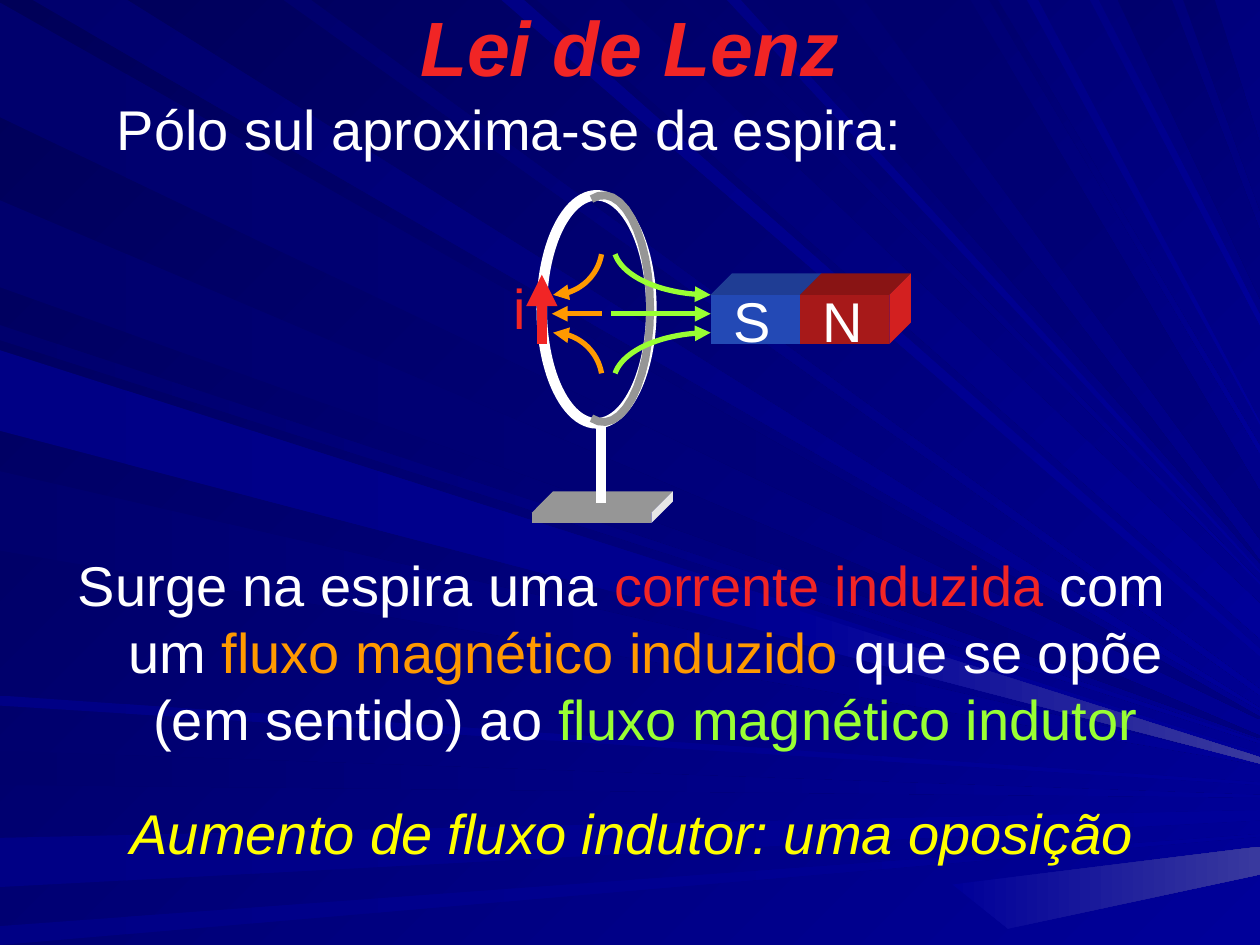
from math import cos, radians, sin
from typing import NamedTuple

from lxml import etree
from pptx import Presentation
from pptx import util as u
from pptx.dml.color import RGBColor
from pptx.enum import shapes, text
from pptx.oxml.ns import qn

Point = tuple[float, float]
FONT = "Arial"
WIDTH, HEIGHT = 10, 7.5
COLORS = {
    "white": "FFFFFF", "red": "F12525", "orange": "FF9900", "green": "99FF33",
    "yellow": "FFFF00", "gray": "969696", "light": "E6E6E6",
    "south": "2349B5", "south top": "1F3D94",
    "north": "A71919", "north top": "891414", "north side": "D32020",
    "night": "000058", "dark": "00006D", "deep": "000080", "navy": "000085",
    "royal": "000099", "glow": "39399E",
}


class Ray(NamedTuple):
    """A beam from one slide edge to the right edge."""
    near: float
    far: float
    end: float
    spread: float = 0.02
    start_color: str = "dark"
    end_color: str = "royal"


class Block(NamedTuple):
    left: float
    top: float
    width: float
    height: float
    front: str
    lid: str
    side: str


class TextBlock(NamedTuple):
    place: tuple[float, float, float, float]
    runs: list[tuple[str, str]]
    centered: bool = False
    italic: bool = False


LEFT_RAYS = [
    Ray(0.02, 0.93, 5.69, end_color="deep"),
    Ray(5.96, 6.23, 6.31),
    Ray(6.65, 7.04, 6.43, 0.08, "navy"),
    Ray(7.35, 7.5, 6.62, start_color="navy"),
    Ray(2.58, 2.7, 5.88),
    Ray(1.59, 2.28, 5.84, end_color="deep"),
    Ray(2.78, 3.42, 5.98, 0.06, "navy"),
    Ray(3.74, 4.37, 6.05),
    Ray(5.52, 5.6, 6.21, start_color="navy"),
]
TOP_RAYS = [
    Ray(0.26, 1.01, 5.62),
    Ray(3.98, 4.16, 5.15, 0.06, "navy"),
    Ray(4.26, 4.92, 4.79, 0.28),
    Ray(5.4, 5.52, 4.62),
    Ray(6.06, 6.61, 4.45, end_color="deep"),
    Ray(8.87, 9.3, 1.83, 0.54, end_color="deep"),
    Ray(9.39, 9.64, 1.14, 0.53, end_color="deep"),
    Ray(2.25, 2.47, 5.47, 0.05),
    Ray(5.77, 5.88, 4.53, start_color="navy"),
    Ray(6.86, 7.7, 3.9, 0.38, end_color="deep"),
    Ray(7.85, 7.92, 3.54, 0.06),
    Ray(8.15, 8.24, 3.35, start_color="navy"),
    Ray(8.65, 8.72, 2.5, 0.08, "navy"),
]
GLOWS = [
    [(6.35, 4.85), (WIDTH, 6.01), (WIDTH, 6.06), (6.35, 5.11)],
    [(7.56, 7.02), (WIDTH, 6.72), (WIDTH, 6.94), (8, 7.37)],
]
DEPTH = 0.17
BASE = Block(4.22, 4.07, 0.95, 0.08, "gray", "gray", "light")
MAGNET = [
    Block(5.64, 2.34, 0.71, 0.39, "south", "south top", "south top"),
    Block(6.35, 2.34, 0.71, 0.39, "north", "north top", "north side"),
]
TEXTS = [
    TextBlock((3.98, 2.12, 0.48, 0.75), [("i", "red")]),
    TextBlock((0.83, 0.7, 6.93, 0.71), [("Pólo sul aproxima-se da espira:", "white")]),
    TextBlock((0.35, 4.32, 9.17, 1.67), [
        ("Surge na espira uma ", "white"), ("corrente induzida", "red"), (" com um ", "white"),
        ("fluxo magnético induzido", "orange"), (" que se opõe (em sentido) ao ", "white"),
        ("fluxo magnético indutor", "green")], centered=True),
    TextBlock((5.72, 2.23, 0.48, 0.75), [("S", "white")]),
    TextBlock((6.43, 2.23, 0.48, 0.75), [("N", "white")]),
    TextBlock((0.55, 6.29, 8.94, 0.84), [("Aumento de fluxo indutor: uma oposição", "yellow")],
              centered=True, italic=True),
]


def rgb(name: str) -> RGBColor:
    return RGBColor.from_string(COLORS[name])


def paint(fill, start: str, end: str, angle: int) -> None:
    fill.gradient()
    fill.gradient_angle = (360 - angle) % 360
    for stop, name in zip(fill.gradient_stops, (start, end)):
        stop.color.rgb = rgb(name)


def set_line(shape, color: str, width: float, arrow: bool = False) -> None:
    shape.line.color.rgb = rgb(color)
    shape.line.width = u.Pt(width)
    if arrow:
        etree.SubElement(shape.line._get_or_add_ln(), qn("a:headEnd"), type="triangle")


def add_outline(slide, points: list[Point], close: bool = True):
    corners = [(u.Inches(x), u.Inches(y)) for x, y in points]
    builder = slide.shapes.build_freeform(*corners[0])
    builder.add_line_segments(corners[1:], close=close)
    shape = builder.convert_to_shape()
    shape.shadow.inherit = False
    return shape


def add_beam(slide, points: list[Point], start: str, end: str, angle: int = 0) -> None:
    shape = add_outline(slide, points)
    paint(shape.fill, start, end, angle)
    shape.line.fill.background()


def add_block(slide, block: Block) -> None:
    """Draw a box seen from the front, with its lid and right side."""
    left, top = block.left, block.top
    right, bottom = left + block.width, top + block.height
    faces = {
        "lid": [(left, top), (left + DEPTH, top - DEPTH), (right + DEPTH, top - DEPTH), (right, top)],
        "side": [(right, top), (right + DEPTH, top - DEPTH), (right + DEPTH, bottom - DEPTH), (right, bottom)],
        "front": [(left, top), (right, top), (right, bottom), (left, bottom)],
    }
    for face, points in faces.items():
        shape = add_outline(slide, points)
        shape.fill.solid()
        shape.fill.fore_color.rgb = rgb(getattr(block, face))
        shape.line.fill.background()


def add_arc(slide, center: Point, radii: Point, start: float, sweep: float,
            color: str, width: float, arrow: bool = False) -> None:
    steps = 24
    angles = [radians(start + sweep * step / steps) for step in range(steps + 1)]
    points = [(center[0] + radii[0] * cos(a), center[1] + radii[1] * sin(a)) for a in angles]
    shape = add_outline(slide, points, close=False)
    shape.fill.background()
    set_line(shape, color, width, arrow)


def add_line(slide, start: Point, end: Point, color: str, width: float, arrow: bool = False) -> None:
    ends = map(u.Inches, start + end)
    connector = slide.shapes.add_connector(shapes.MSO_CONNECTOR.STRAIGHT, *ends)
    set_line(connector, color, width, arrow)
    etree.SubElement(connector._element.spPr, qn("a:effectLst"))


def add_run(paragraph, words: str, color: str, **formats) -> None:
    run = paragraph.add_run()
    run.text = words
    run.font.color.rgb = rgb(color)
    for name, value in ({"name": FONT} | formats).items():
        setattr(run.font, name, value)


def add_text(slide, block: TextBlock) -> None:
    frame = slide.shapes.add_textbox(*map(u.Inches, block.place)).text_frame
    frame.word_wrap = True
    paragraph = frame.paragraphs[0]
    paragraph.alignment = text.PP_ALIGN.CENTER if block.centered else text.PP_ALIGN.LEFT
    paragraph.line_spacing = u.Pt(38.3)
    properties = paragraph._p.get_or_add_pPr()
    properties.set("marL", str(u.Inches(0.38)))
    properties.set("indent", str(u.Inches(-0.38)))
    for words, color in block.runs:
        add_run(paragraph, words, color, size=u.Pt(32), italic=block.italic)


def main() -> None:
    presentation = Presentation()
    presentation.slide_width, presentation.slide_height = u.Inches(WIDTH), u.Inches(HEIGHT)
    slide = presentation.slides.add_slide(presentation.slide_layouts[5])

    # Background with rays
    paint(slide.background.fill, "night", "royal", 45)
    for ray in LEFT_RAYS + TOP_RAYS:
        from_left = ray in LEFT_RAYS
        near, far = [(0, edge) if from_left else (edge, 0) for edge in (ray.near, ray.far)]
        tips = [(WIDTH, ray.end), (WIDTH, ray.end + ray.spread)]
        points = [near, *tips, far] if from_left else [far, *tips, near]
        add_beam(slide, points, ray.start_color, ray.end_color, 0 if from_left else 45)
    for glow in GLOWS:
        add_beam(slide, glow, "royal", "glow")

    # Title, brought in front of the rays
    title = slide.shapes.title
    slide.shapes._spTree.append(title._element)
    place = {"left": 0.5, "top": -0.03, "width": 9, "height": 0.79}
    for name, value in place.items():
        setattr(title, name, u.Inches(value))
    title.text_frame.vertical_anchor = text.MSO_ANCHOR.MIDDLE
    heading = title.text_frame.paragraphs[0]
    heading.alignment = text.PP_ALIGN.CENTER
    add_run(heading, "Lei de Lenz", "red", size=u.Pt(44), bold=True, italic=True)

    # Ring on its stand
    ring = slide.shapes.add_shape(shapes.MSO_SHAPE.OVAL, *map(u.Inches, (4.3, 1.55, 0.87, 1.81)))
    ring.shadow.inherit = False
    ring.fill.background()
    set_line(ring, "white", 6)
    add_block(slide, BASE)
    add_line(slide, (4.77, 3.99), (4.77, 3.36), "white", 6)
    add_arc(slide, (4.79, 2.45), (0.37, 0.9), -105, 210, "gray", 4.5)

    # Magnet, current and field arrows
    for block in MAGNET:
        add_block(slide, block)
    add_line(slide, (4.3, 2.18), (4.3, 2.73), "red", 6, arrow=True)
    add_line(slide, (5.64, 2.49), (4.85, 2.49), "green", 3, arrow=True)
    add_line(slide, (4.38, 2.49), (4.78, 2.49), "orange", 3, arrow=True)
    for center_y, start, turn in ((1.95, 90, 1), (3.03, 270, -1)):
        add_arc(slide, (5.64, center_y), (0.77, 0.39), start, 80 * turn, "green", 3, arrow=True)
        add_arc(slide, (4.39, center_y), (0.39, 0.39), start, -80 * turn, "orange", 3, arrow=True)

    # Labels and sentences
    for block in TEXTS:
        add_text(slide, block)

    presentation.save("out.pptx")


if __name__ == "__main__":
    main()
